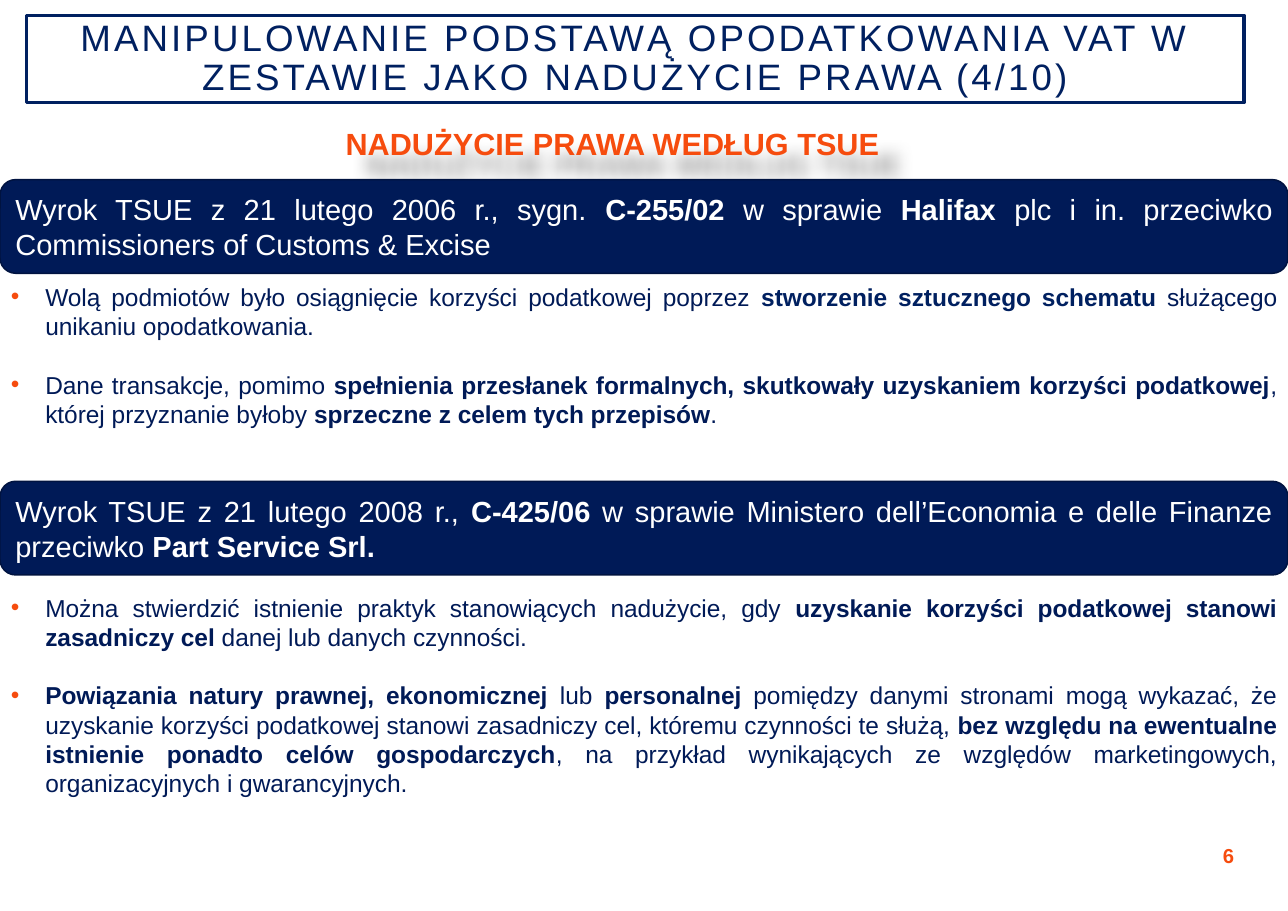
from lxml.etree import SubElement
from pptx import Presentation
from pptx.dml.color import RGBColor
from pptx.enum.shapes import MSO_SHAPE as Preset
from pptx.enum.text import MSO_ANCHOR as Anchor, PP_ALIGN as Align
from pptx.oxml.ns import qn
from pptx.util import Pt

WIDTH, HEIGHT = 841.68, 595.44
COLORS = {
    "white": "FFFFFF",
    "navy": "001A57",
    "title": "002060",
    "edge": "001340",
    "orange": "F64C0E",
    "shadow": "000000",
}


class Deck:
    font = "Arial"
    bullet_indent = 22.5

    def __init__(self):
        self.file = Presentation()
        self.file.slide_width, self.file.slide_height = Pt(WIDTH), Pt(HEIGHT)
        self.slide = self.file.slides.add_slide(self.file.slide_layouts[6])

    def color(self, name):
        return RGBColor.from_string(COLORS[name])

    def add_text(self, paragraph, text, size, color, align, strong=None):
        paragraph.alignment = align
        font = paragraph.font
        font.name, font.size = self.font, Pt(size)
        font.color.rgb = self.color(color)
        for index, part in enumerate(text.split("**")):
            if part:
                run = paragraph.add_run()
                run.text = part
                if index % 2:
                    run.font.bold = True
                    if strong:
                        run.font.color.rgb = self.color(strong)

    def panel(self, preset, box, fill, line, line_width):
        panel = self.slide.shapes.add_shape(preset, *map(Pt, box))
        panel.shadow.inherit = False
        panel.fill.solid()
        panel.fill.fore_color.rgb = self.color(fill)
        panel.line.color.rgb = self.color(line)
        panel.line.width = Pt(line_width)
        panel.text_frame.word_wrap = True
        panel.text_frame.vertical_anchor = Anchor.MIDDLE
        return panel.text_frame

    def title(self, box, text):
        frame = self.panel(Preset.RECTANGLE, box, "white", "title", 2.5)
        frame.margin_left = frame.margin_right = Pt(14.4)
        frame.margin_top = frame.margin_bottom = Pt(14.4)
        heading = frame.paragraphs[0]
        heading.line_spacing = 0.9
        self.add_text(heading, text, 24, "title", Align.CENTER)
        for run in heading.runs:
            run.font._element.set("spc", "200")

    def ruling(self, top, text):
        frame = self.panel(Preset.ROUNDED_RECTANGLE, (0, top, WIDTH, 61.2), "navy", "edge", 1)
        self.add_text(frame.paragraphs[0], text, 19, "white", Align.JUSTIFY)

    def label(self, box, text, size, align):
        label = self.slide.shapes.add_textbox(*map(Pt, box))
        frame = label.text_frame
        frame.word_wrap = True
        frame.vertical_anchor = Anchor.MIDDLE
        self.add_text(frame.paragraphs[0], text, size, "orange", align)
        frame.paragraphs[0].font.bold = True
        return label

    def cast_shadow(self, label):
        effects = SubElement(label._element.spPr, qn("a:effectLst"))
        shadow = SubElement(effects, qn("a:outerShdw"), blurRad=str(Pt(10)),
                            dist=str(Pt(19)), dir="2700000", algn="tl", rotWithShape="0")
        tint = SubElement(shadow, qn("a:srgbClr"), val=COLORS["shadow"])
        SubElement(tint, qn("a:alpha"), val="40000")

    def theses(self, top, height, items):
        frame = self.slide.shapes.add_textbox(0, Pt(top), Pt(WIDTH), Pt(height)).text_frame
        frame.word_wrap = True
        for index, (text, strong) in enumerate(items):
            thesis = frame.paragraphs[0] if index == 0 else frame.add_paragraph()
            if index:
                thesis.space_before = Pt(19)
            layout = thesis._p.get_or_add_pPr()
            layout.set("marL", str(Pt(self.bullet_indent)))
            layout.set("indent", str(-Pt(self.bullet_indent)))
            SubElement(SubElement(layout, qn("a:buClr")), qn("a:srgbClr"), val=COLORS["orange"])
            SubElement(layout, qn("a:buFont"), typeface=self.font)
            SubElement(layout, qn("a:buChar"), char="•")
            self.add_text(thesis, text, 16, "navy", Align.JUSTIFY, strong)


def main():
    deck = Deck()
    deck.label((769.7, 543.6, 43.9, 31.7), "6", 13.2, Align.RIGHT)
    deck.title((17.3, 10.1, 795.6, 56.9),
               "MANIPULOWANIE PODSTAWĄ OPODATKOWANIA VAT W ZESTAWIE JAKO NADUŻYCIE PRAWA (4/10)")
    subtitle = deck.label((195.1, 61.2, 410.4, 64.8), "NADUŻYCIE PRAWA WEDŁUG TSUE", 20, Align.CENTER)
    deck.cast_shadow(subtitle)

    deck.ruling(117.4, "Wyrok TSUE z 21 lutego 2006 r., sygn. **C-255/02** w sprawie **Halifax **"
                       "plc i in. przeciwko Commissioners of Customs & Excise")
    deck.theses(180.7, 123.8, [
        ("Wolą podmiotów było osiągnięcie korzyści podatkowej poprzez **stworzenie sztucznego "
         "schematu **służącego unikaniu opodatkowania.", "title"),
        ("Dane transakcje, pomimo **spełnienia przesłanek formalnych, skutkowały uzyskaniem "
         "korzyści podatkowej**, której przyznanie byłoby **sprzeczne z celem tych przepisów**.", None),
    ])

    deck.ruling(314.6, "Wyrok TSUE z 21 lutego 2008 r., **C‑425/06 **w sprawie Ministero "
                       "dell’Economia e delle Finanze przeciwko **Part Service Srl.**")
    deck.theses(383.8, 143.3, [
        ("Można stwierdzić istnienie praktyk stanowiących nadużycie, gdy **uzyskanie korzyści "
         "podatkowej stanowi zasadniczy cel** danej lub danych czynności.", None),
        ("**Powiązania natury prawnej, ekonomicznej **lub **personalnej** pomiędzy danymi stronami "
         "mogą wykazać, że uzyskanie korzyści podatkowej stanowi zasadniczy cel, któremu czynności "
         "te służą, **bez względu na ewentualne istnienie ponadto celów gospodarczych**, na przykład "
         "wynikających ze względów marketingowych, organizacyjnych i gwarancyjnych.", None),
    ])
    deck.file.save("out.pptx")


if __name__ == "__main__":
    main()
